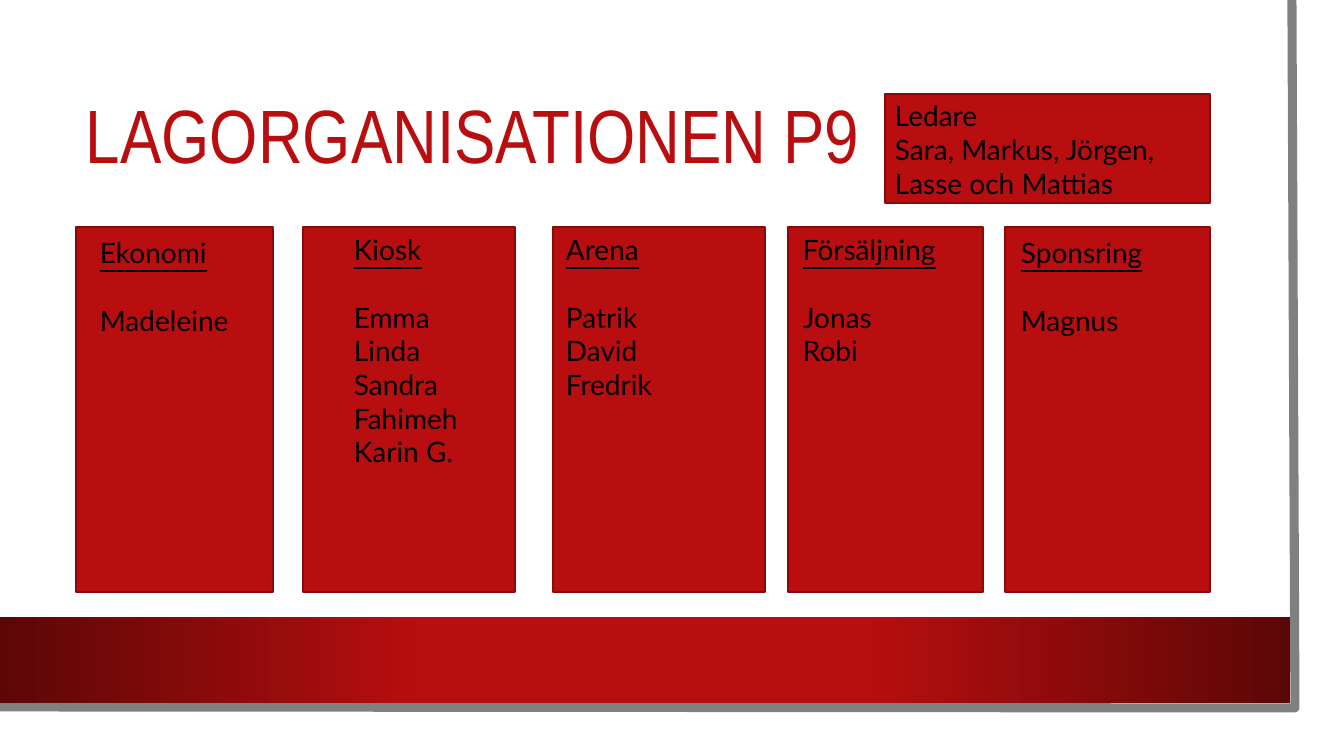
from dataclasses import dataclass

from pptx import Presentation
from pptx.dml.color import RGBColor
from pptx.enum.shapes import MSO_SHAPE as Shape
from pptx.enum.text import MSO_ANCHOR as Anchor
from pptx.oxml import parse_xml
from pptx.oxml.ns import nsdecls
from pptx.util import Emu, Pt

# Content
TITLE = "LAGORGANISATIONEN P9"
LEADERS = ["Ledare", "Sara, Markus, Jörgen, Lasse och Mattias"]
# group, members, card (left, width), text (left, top, width)
GROUPS = [
    ("Ekonomi", ["Madeleine"], (76, 197), (90, 231, 222)),
    ("Kiosk", ["Emma", "Linda", "Sandra", "Fahimeh", "Karin G."],
     (303, 212), (344, 228, 203)),
    ("Arena", ["Patrik", "David", "Fredrik"], (553, 212), (556, 228, 208)),
    ("Försäljning", ["Jonas", "Robi"], (788, 195), (793, 228, 188)),
    ("Sponsring", ["Magnus"], (1005, 205), (1011, 231, 205)),
]

# Geometry in px
SLIDE = (1344, 756)
PAGE_EDGE = [(1292, 0), (1295, 708), (0, 707)]
BAND = (0, 617, 1290, 86)
TITLE_BOX = (76, 76, 1146, 127)
LEADERS_BOX = (885, 94, 325, 109)
CARD_TOP, CARD_HEIGHT = 227, 365
LINE_HEIGHT = 34


@dataclass(frozen=True)
class Theme:
    red: str = "B80E0F"
    outline: str = "880A0B"
    dark: str = "5C0707"
    edge: str = "808080"
    ink: str = "000000"
    title_font: str = "Arial Narrow"
    body_font: str = "Lato"
    title_size: int = 54
    body_size: int = 20
    body_line: int = 24


THEME = Theme()


def px(length):
    return Emu(length * 9525 * 20 // 21)


def rgb(colour):
    return RGBColor.from_string(colour)


def add_text(lines, box, font=THEME.body_font, size=THEME.body_size,
             colour=THEME.ink, anchor=Anchor.TOP, spacing=None, heading=False):
    frame = slide.shapes.add_textbox(*map(px, box)).text_frame
    frame.word_wrap = True
    frame.vertical_anchor = anchor
    for index, line in enumerate(lines):
        paragraph = frame.paragraphs[0] if index == 0 else frame.add_paragraph()
        paragraph.line_spacing = spacing
        run = paragraph.add_run()
        run.text = line
        run.font.name, run.font.size = font, Pt(size)
        run.font.color.rgb = rgb(colour)
        if heading and index == 0:
            run.font.underline = True
            paragraph.space_after = Pt(THEME.body_line)


def add_card(box):
    card = slide.shapes.add_shape(Shape.RECTANGLE, *map(px, box))
    card.shadow.inherit = False
    card.fill.solid()
    card.fill.fore_color.rgb = rgb(THEME.red)
    card.line.color.rgb = rgb(THEME.outline)
    card.line.width = Pt(1.5)


def add_page_edge():
    start, *corners = [tuple(map(px, point)) for point in PAGE_EDGE]
    builder = slide.shapes.build_freeform(*start)
    builder.add_line_segments(corners, close=False)
    edge = builder.convert_to_shape()
    edge.shadow.inherit = False
    edge.fill.background()
    edge.line.color.rgb = rgb(THEME.edge)
    edge.line.width = Pt(6.5)


def add_band():
    band = slide.shapes.add_shape(Shape.RECTANGLE, *map(px, BAND))
    band.shadow.inherit = False
    band.line.fill.background()
    stops = [(0, THEME.dark), (33, THEME.red), (67, THEME.red), (100, THEME.dark)]
    stop_xml = "".join(
        f'<a:gs pos="{place * 1000}"><a:srgbClr val="{colour}"/></a:gs>'
        for place, colour in stops)
    gradient = parse_xml(
        f'<a:gradFill {nsdecls("a")} rotWithShape="1"><a:gsLst>{stop_xml}</a:gsLst>'
        '<a:lin ang="0" scaled="0"/></a:gradFill>')
    band.element.spPr.prstGeom.addnext(gradient)


deck = Presentation()
deck.slide_width, deck.slide_height = map(px, SLIDE)
slide = deck.slides.add_slide(deck.slide_layouts[6])

# Page edge, bottom band and title
add_page_edge()
add_band()
add_text([TITLE], TITLE_BOX, font=THEME.title_font, size=THEME.title_size,
         colour=THEME.red, anchor=Anchor.MIDDLE, spacing=0.9)

# Leaders
add_card(LEADERS_BOX)
add_text(LEADERS, LEADERS_BOX)

# One card per group: heading, a line of space, members
for group, members, (card_left, card_width), (left, top, width) in GROUPS:
    add_card((card_left, CARD_TOP, card_width, CARD_HEIGHT))
    height = (len(members) + 2) * LINE_HEIGHT + 10
    add_text([group, *members], (left, top, width, height), heading=True)

deck.save("out.pptx")
